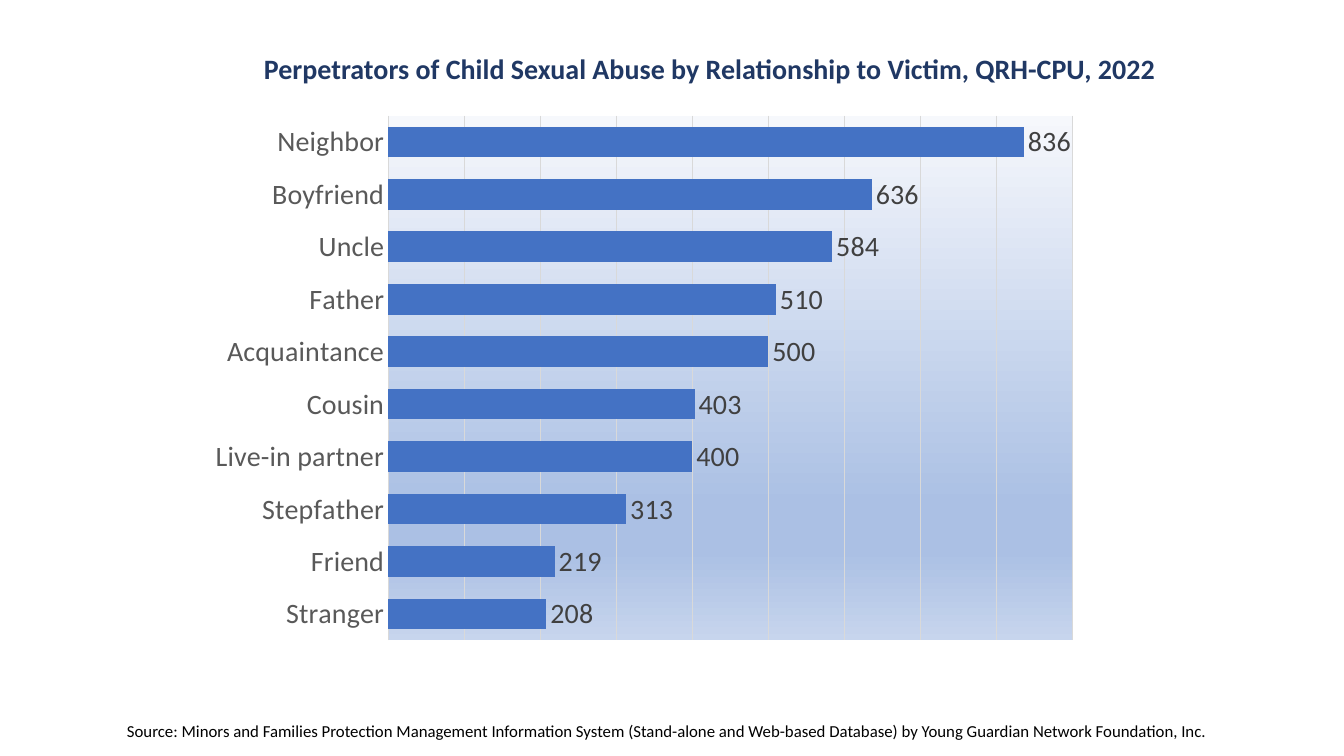
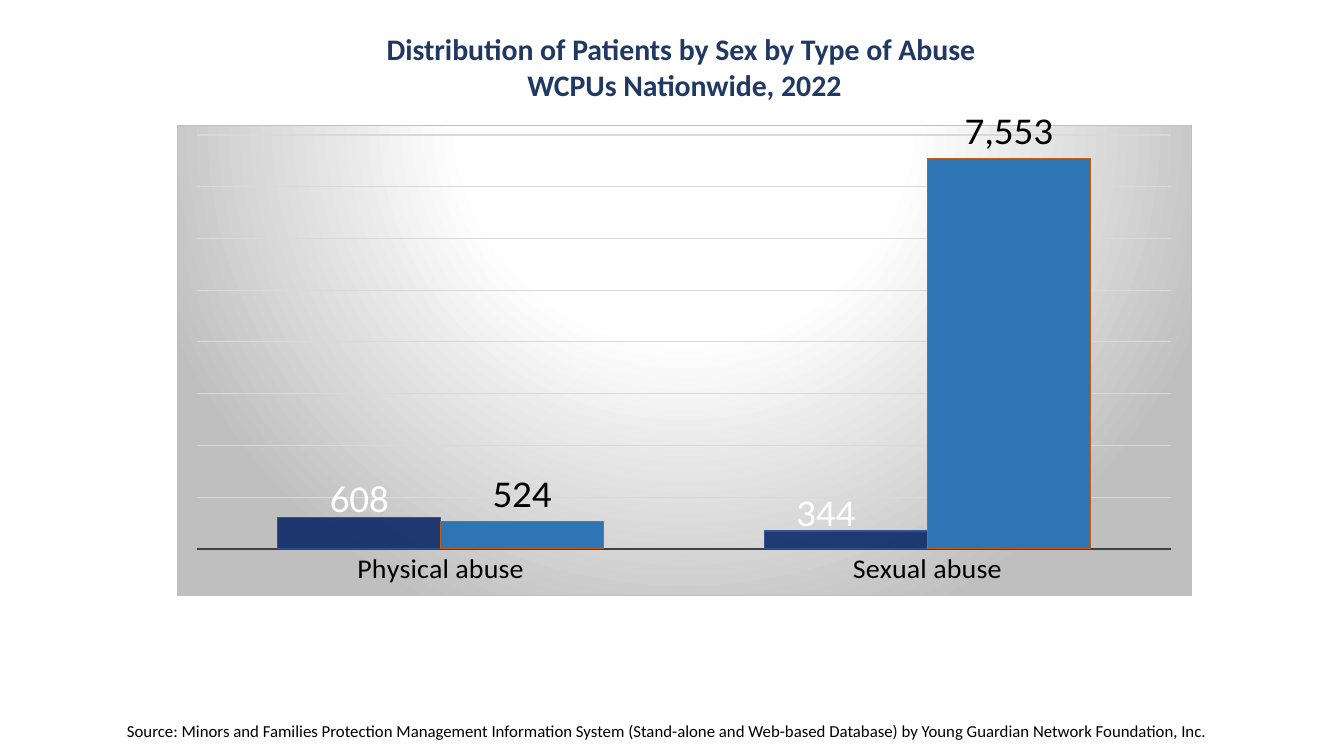
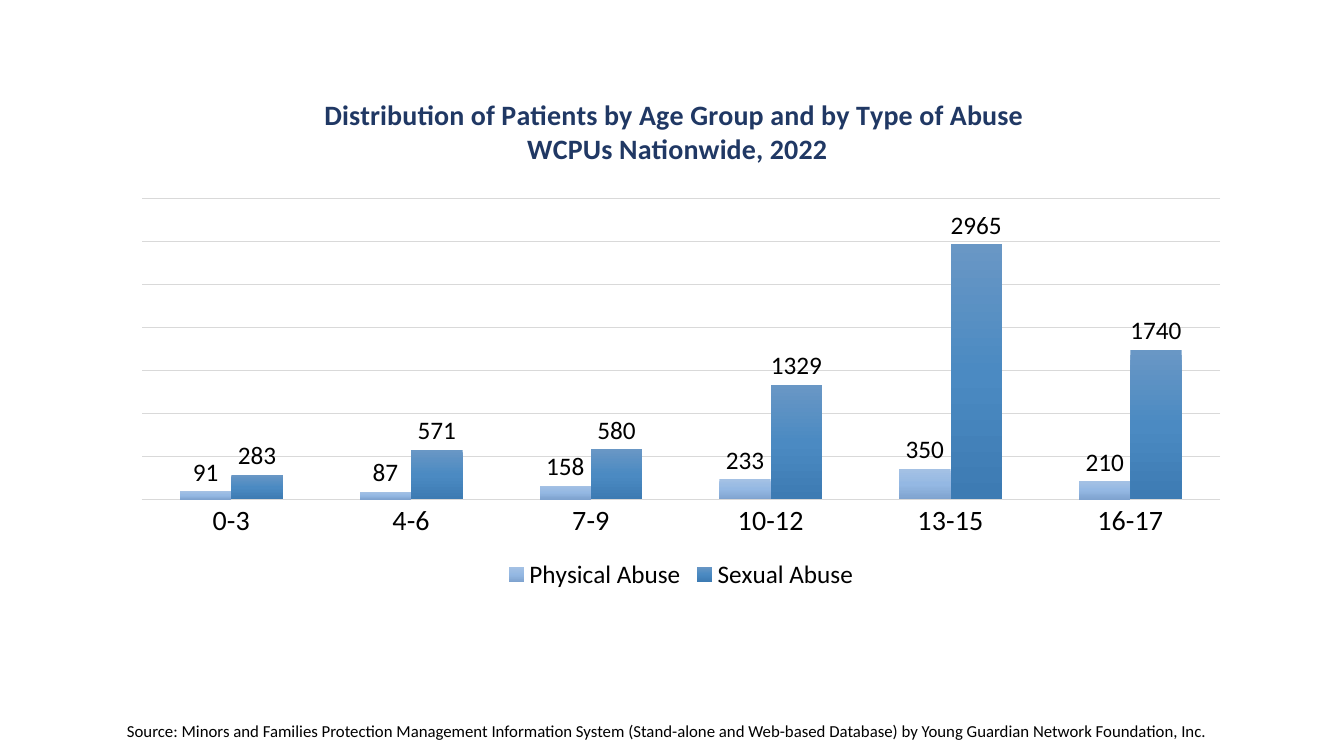
import pptx
import pptx.chart.data
import pptx.dml.color
import pptx.enum.chart
import pptx.enum.text
import pptx.oxml
import pptx.oxml.ns
import pptx.util
from pptx.util import Cm, Pt

RGB = pptx.dml.color.RGBColor
ChartType = pptx.enum.chart.XL_CHART_TYPE
Align = pptx.enum.text.PP_ALIGN
qn = pptx.oxml.ns.qn

FONT = "Calibri"
BLACK = RGB(0x00, 0x00, 0x00)
WHITE = RGB(0xFF, 0xFF, 0xFF)
TITLE_NAVY = RGB(0x20, 0x38, 0x64)
DARK_GREY = RGB(0x40, 0x40, 0x40)
LABEL_GREY = RGB(0x59, 0x59, 0x59)
GRID_GREY = RGB(0xD9, 0xD9, 0xD9)
BORDER_GREY = RGB(0xBF, 0xBF, 0xBF)
BAR_BLUE = RGB(0x44, 0x72, 0xC4)
DEEP_NAVY = RGB(0x00, 0x20, 0x60)
EDGE_BLUE = RGB(0x2F, 0x55, 0x97)
MID_BLUE = RGB(0x2E, 0x75, 0xB6)
EDGE_ORANGE = RGB(0xC5, 0x5A, 0x11)

DOWNWARD = '<a:lin ang="5400000" scaled="0"/>'
RADIAL = ('<a:path path="circle">'
          '<a:fillToRect l="50000" t="-80000" r="50000" b="180000"/></a:path>')
SKY = ([(0, "F6F8FC"), (74, "ABC0E4"), (83, "ABC0E4"), (100, "C7D5ED")], DOWNWARD)
SPOTLIGHT = ([(0, "FFFFFF"), (39, "FFFFFF"), (100, "BFBFBF")], RADIAL)
LIGHT_BARS = ([(0, "A4C1E4"), (50, "94B8E3"), (100, "7FA3CF")], DOWNWARD)
DARK_BARS = ([(0, "6997C5"), (50, "4B8AC2"), (100, "3D7BB3")], DOWNWARD)

SOURCE = ("Source: Minors and Families Protection Management Information System "
          "(Stand-alone and Web-based Database) by Young Guardian Network Foundation, Inc.")
SOURCE_PLACE = (2.95, 18.03, 28.58, 1.27)

# Places are left, top, width, height in cm; plots are fractions of the chart.
SLIDES = [
    dict(
        title=["Perpetrators of Child Sexual Abuse by Relationship to Victim, QRH-CPU, 2022"],
        title_place=(6.4, 1.17, 23.67, 1.12), title_size=20, title_align=Align.LEFT,
        kind=ChartType.BAR_CLUSTERED, place=(5.08, 2.64, 22.4, 13.77),
        plot=(0.21, 0.02, 0.77, 0.96), plot_fill=SKY,
        gap=71, top=900, step=100, axis_text=LABEL_GREY, axis_line=(GRID_GREY, 0.75),
        categories=["Stranger", "Friend", "Stepfather", "Live-in partner", "Cousin",
                    "Acquaintance", "Father", "Uncle", "Boyfriend", "Neighbor"],
        series=[dict(name="Series 1", fill=BAR_BLUE, label=(20, DARK_GREY),
                     values=[208, 219, 313, 400, 403, 500, 510, 584, 636, 836])],
    ),
    dict(
        title=["Distribution of Patients by Sex by Type of Abuse ", "WCPUs Nationwide, 2022"],
        title_place=(7.42, 0.66, 19.66, 2.08), title_size=21.3, title_align=Align.CENTER,
        kind=ChartType.COLUMN_CLUSTERED, place=(4.45, 2.74, 25.58, 12.29),
        plot=(0.02, 0.02, 0.96, 0.88), area_fill=SPOTLIGHT, border=BORDER_GREY,
        gap=99, top=8000, step=1000, axis_text=BLACK, axis_line=(DARK_GREY, 1.5),
        categories=["Physical abuse", "Sexual abuse"],
        series=[
            dict(name="Series 1", values=[608, 344], fill=DEEP_NAVY, opacity=85,
                 line=EDGE_BLUE, label=(28, WHITE), label_shifts=[(0, 0.02), (-0.02, 0.02)]),
            dict(name="Series 2", values=[524, 7553], fill=MID_BLUE, line=EDGE_ORANGE,
                 label=(28, BLACK), number_format="#,##0"),
        ],
    ),
    dict(
        chart_title=["Distribution of Patients by Age Group and by Type of Abuse ",
                     "WCPUs Nationwide, 2022"],
        title_size=20, chart_title_at=(0.18, 0), legend_size=18,
        kind=ChartType.COLUMN_CLUSTERED, place=(3, 2.34, 28.32, 12.65),
        plot=(0.02, 0.21, 0.96, 0.6),
        gap=150, top=3500, step=500, axis_text=BLACK, axis_line=(GRID_GREY, 1),
        categories=["0-3", "4-6", "7-9", "10-12", "13-15", "16-17"],
        series=[
            dict(name="Physical Abuse", values=[91, 87, 158, 233, 350, 210],
                 fill=LIGHT_BARS, label=(18, BLACK)),
            dict(name="Sexual Abuse", values=[283, 571, 580, 1329, 2965, 1740],
                 fill=DARK_BARS, label=(18, BLACK)),
        ],
    ),
]


def style(font, size, color, bold=False):
    font.name, font.size, font.bold = FONT, Pt(size), bold
    font.color.rgb = color


def write(frame, lines, size, color, bold, align):
    for number, line in enumerate(lines):
        para = frame.add_paragraph() if number else frame.paragraphs[0]
        para.text = line
        para.alignment = align
        style(para.font, size, color, bold)


def add_text(slide, place, lines, size, color, bold=False, align=Align.LEFT):
    box = slide.shapes.add_textbox(*map(Cm, place))
    box.text_frame.word_wrap = True
    write(box.text_frame, lines, size, color, bold, align)
    return box


def fill_xml(gradient):
    """XML of a gradient, or of no fill when there is none."""
    if gradient is None:
        return "<a:noFill/>"
    stops, direction = gradient
    marks = "".join(f'<a:gs pos="{at * 1000}"><a:srgbClr val="{color}"/></a:gs>'
                    for at, color in stops)
    return f'<a:gradFill rotWithShape="1"><a:gsLst>{marks}</a:gsLst>{direction}</a:gradFill>'


def properties(gradient=None, border=None):
    """Shape properties for the chart area, the plot area or a series."""
    edge = "<a:noFill/>"
    if border is not None:
        edge = f'<a:solidFill><a:srgbClr val="{border}"/></a:solidFill>'
    return pptx.oxml.parse_xml(
        f'<c:spPr {pptx.oxml.ns.nsdecls("c", "a")}>{fill_xml(gradient)}'
        f'<a:ln w="{Pt(0.75)}">{edge}</a:ln></c:spPr>')


def set_layout(parent, index, x, y, width=None, height=None, from_edge=True):
    """Put a manual layout into a chart part as its child number index."""
    parts = []
    if width is not None:
        parts.append('<c:layoutTarget val="inner"/>')
    if from_edge:
        parts.append('<c:xMode val="edge"/><c:yMode val="edge"/>')
    parts += [f'<c:{name} val="{value}"/>'
              for name, value in zip("xywh", (x, y, width, height)) if value is not None]
    for old in parent.findall(qn("c:layout")):
        parent.remove(old)
    parent.insert(index, pptx.oxml.parse_xml(
        f'<c:layout {pptx.oxml.ns.nsdecls("c")}><c:manualLayout>'
        f'{"".join(parts)}</c:manualLayout></c:layout>'))


def style_series(series, look):
    fill = series.format.fill
    fill.solid()
    shape_properties = series._element.find(qn("c:spPr"))
    if isinstance(look["fill"], RGB):
        fill.fore_color.rgb = look["fill"]
    else:
        series._element.replace(shape_properties, properties(look["fill"]))
    if "opacity" in look:
        color = next(shape_properties.iter(qn("a:srgbClr")))
        color.append(pptx.oxml.parse_xml(
            f'<a:alpha {pptx.oxml.ns.nsdecls("a")} val="{look["opacity"] * 1000}"/>'))
    if "line" in look:
        series.format.line.color.rgb = look["line"]
        series.format.line.width = Pt(0.75)
    series.invert_if_negative = False

    labels = series.data_labels
    labels.show_value = True
    labels.position = pptx.enum.chart.XL_LABEL_POSITION.OUTSIDE_END
    style(labels.font, *look["label"])
    if "number_format" in look:
        labels.number_format = look["number_format"]
        labels.number_format_is_linked = False
    for number, shift in enumerate(look.get("label_shifts", [])):
        label = series.points[number].data_label
        style(label.font, *look["label"])
        label.position = labels.position
        set_layout(labels._element.findall(qn("c:dLbl"))[number], 1, *shift, from_edge=False)


def style_axes(chart, content):
    none = pptx.enum.chart.XL_TICK_MARK.NONE
    categories, values = chart.category_axis, chart.value_axis
    categories.major_tick_mark = categories.minor_tick_mark = none
    style(categories.tick_labels.font, 20, content["axis_text"])
    color, width = content["axis_line"]
    categories.format.line.color.rgb = color
    categories.format.line.width = Pt(width)
    values.visible = False
    values.minimum_scale, values.maximum_scale = 0, content["top"]
    values.major_unit = content["step"]
    values.has_major_gridlines = True
    values.major_gridlines.format.line.color.rgb = GRID_GREY
    values.major_gridlines.format.line.width = Pt(0.75)


def add_chart(slide, content):
    data = pptx.chart.data.CategoryChartData()
    data.categories = content["categories"]
    for look in content["series"]:
        data.add_series(look["name"], look["values"])
    chart = slide.shapes.add_chart(content["kind"], *map(Cm, content["place"]), data).chart
    style(chart.font, 10, BLACK)
    style_axes(chart, content)

    plot = chart.plots[0]
    plot.gap_width = content["gap"]
    plot.vary_by_categories = False
    for series, look in zip(plot.series, content["series"]):
        style_series(series, look)

    chart.has_title = "chart_title" in content
    if chart.has_title:
        write(chart.chart_title.text_frame, content["chart_title"], content["title_size"],
              TITLE_NAVY, True, Align.CENTER)
        set_layout(next(chart.element.iter(qn("c:title"))), 1, *content["chart_title_at"])
    chart.has_legend = "legend_size" in content
    if chart.has_legend:
        chart.legend.position = pptx.enum.chart.XL_LEGEND_POSITION.BOTTOM
        chart.legend.include_in_layout = False
        style(chart.legend.font, content["legend_size"], BLACK)

    plot_area = next(chart.element.iter(qn("c:plotArea")))
    set_layout(plot_area, 0, *content["plot"])
    plot_area.append(properties(content.get("plot_fill")))
    chart.element.find(qn("c:chart")).addnext(
        properties(content.get("area_fill"), content.get("border")))


def main():
    deck = pptx.Presentation()
    deck.slide_width, deck.slide_height = Cm(33.87), Cm(19.05)
    blank = deck.slide_layouts[6]
    for content in SLIDES:
        slide = deck.slides.add_slide(blank)
        add_chart(slide, content)
        if "title" in content:
            add_text(slide, content["title_place"], content["title"], content["title_size"],
                     TITLE_NAVY, True, content["title_align"])
    # The source line belongs to the layout, so that every slide shows it.
    source_line = add_text(slide, SOURCE_PLACE, [SOURCE], 12, BLACK)
    blank.shapes.element.append(source_line.element)
    deck.save("out.pptx")


if __name__ == "__main__":
    main()
